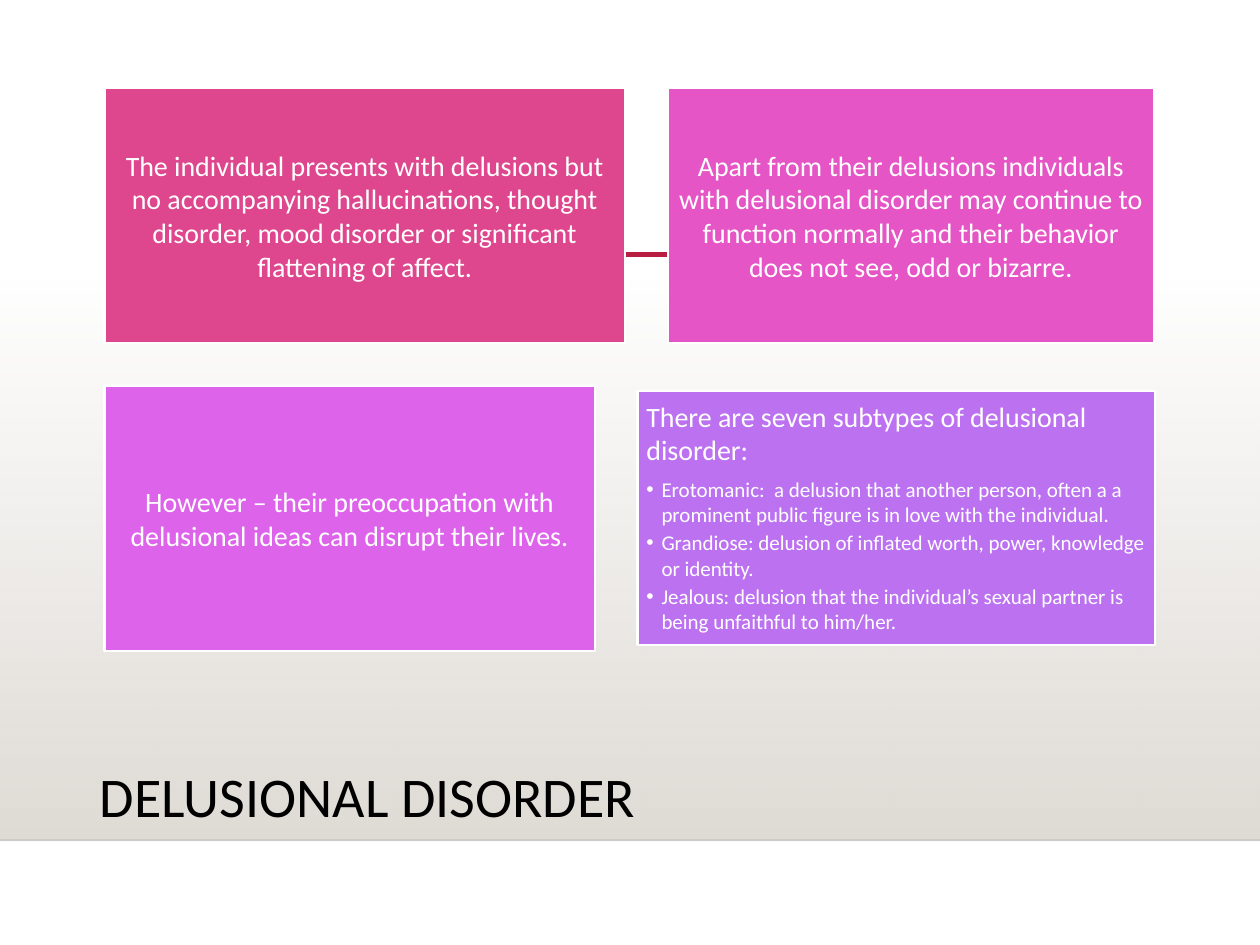
from dataclasses import dataclass

from lxml import etree
from pptx import Presentation
from pptx.dml.color import RGBColor
from pptx.enum import shapes, text
from pptx.oxml import ns
from pptx.util import Inches, Pt

COLORS = {
    "white": "FFFFFF", "black": "000000", "stone": "DFDBD5", "rule": "B71E42",
    "rose": "DE478E", "pink": "E555C6", "orchid": "DD63EB", "violet": "BC72F0",
}
FONT = "Calibri"


@dataclass
class Card:
    left: float
    top: float
    width: float
    height: float
    color: str
    statement: str = ""

    def box(self) -> list:
        return [Inches(v) for v in (self.left, self.top, self.width, self.height)]


CARDS = [
    Card(0.83, 0.7, 4.13, 2.02, "rose",
         "The individual presents with delusions but no accompanying hallucinations, "
         "thought disorder, mood disorder or significant flattening of affect."),
    Card(5.3, 0.7, 3.86, 2.02, "pink",
         "Apart from their delusions individuals with delusional disorder may continue "
         "to function normally and their behavior does not see, odd or bizarre."),
    Card(0.83, 3.06, 3.89, 2.11, "orchid",
         "However – their preoccupation with delusional ideas can disrupt their lives."),
]
SUBTYPE_CARD = Card(5.06, 3.1, 4.11, 2.02, "violet")
SUBTYPE_INTRO = "There are seven subtypes of delusional disorder:"
SUBTYPES = [
    "Erotomanic:  a delusion that another person, often a a prominent public figure "
    "is in love with the individual.",
    "Grandiose: delusion of inflated worth, power, knowledge or identity.",
    "Jealous: delusion that the individual’s sexual partner is being unfaithful to him/her.",
]


def rgb(name: str) -> RGBColor:
    return RGBColor.from_string(COLORS[name])


def set_all(target, values: dict) -> None:
    for name, value in values.items():
        setattr(target, name, value)


def add_rule(slide, left: float, right: float, y: float, color: str, width: float):
    rule = slide.shapes.add_connector(
        shapes.MSO_CONNECTOR.STRAIGHT, Inches(left), Inches(y), Inches(right), Inches(y))
    rule.line.color.rgb = rgb(color)
    rule.line.width = Pt(width)
    etree.SubElement(rule.element.spPr, ns.qn("a:effectLst"))
    return rule


def add_backdrop(slide) -> None:
    backdrop = slide.shapes.add_shape(
        shapes.MSO_SHAPE.RECTANGLE, 0, Inches(2.2), Inches(10), Inches(4.46))
    backdrop.shadow.inherit = False
    backdrop.line.fill.background()
    backdrop.fill.gradient()
    backdrop.fill.gradient_angle = 270  # counter-clockwise, so top to bottom
    for stop, alpha in zip(backdrop.fill.gradient_stops, (0, 100000)):
        stop.color.rgb = rgb("stone")
    for color, alpha in zip(backdrop.element.iter(ns.qn("a:srgbClr")), (0, 100000)):
        etree.SubElement(color, ns.qn("a:alpha"), val=str(alpha))


def style_card(shape, card: Card, anchor) -> None:
    shape.fill.solid()
    shape.fill.fore_color.rgb = rgb(card.color)
    shape.line.color.rgb = rgb("white")
    shape.line.width = Pt(1.25)
    margins = {f"margin_{side}": Inches(0.07) for side in ("left", "top", "right", "bottom")}
    set_all(shape.text_frame, {"word_wrap": True, "vertical_anchor": anchor,
                               "auto_size": text.MSO_AUTO_SIZE.NONE, **margins})


def write(paragraph, words: str, size: float, after: float, align) -> None:
    paragraph.text = words
    set_all(paragraph, {"alignment": align, "space_before": Pt(0), "space_after": Pt(after)})
    set_all(paragraph.font, {"name": FONT, "size": Pt(size)})
    paragraph.font.color.rgb = rgb("white")


def set_bullet(paragraph, indent: float, char: str = "") -> None:
    props = paragraph._p.get_or_add_pPr()
    props.set("marL", str(Inches(indent)))
    props.set("indent", str(-Inches(indent)))
    if char:
        etree.SubElement(props, ns.qn("a:buChar"), char=char)
    else:
        etree.SubElement(props, ns.qn("a:buNone"))


def add_card(slide, card: Card) -> None:
    shape = slide.shapes.add_shape(shapes.MSO_SHAPE.RECTANGLE, *card.box())
    shape.shadow.inherit = False
    style_card(shape, card, text.MSO_ANCHOR.MIDDLE)
    write(shape.text_frame.paragraphs[0], card.statement, 16, 5.6, text.PP_ALIGN.CENTER)


def place(shape, box: list) -> None:
    set_all(shape, dict(zip(("left", "top", "width", "height"), box)))


def fill_title(title) -> None:
    place(title, [Inches(v) for v in (0.69, 6.05, 6.63, 1.2)])
    title.text_frame.text = "DELUSIONAL DISORDER"
    set_all(title.text_frame, {"vertical_anchor": text.MSO_ANCHOR.TOP, "word_wrap": True,
                               "auto_size": text.MSO_AUTO_SIZE.NONE})
    heading = title.text_frame.paragraphs[0]
    set_all(heading, {"alignment": text.PP_ALIGN.LEFT, "line_spacing": 0.9})
    set_all(heading.font, {"name": FONT, "size": Pt(32)})
    heading.font.color.rgb = rgb("black")


def fill_subtypes(body) -> None:
    place(body, SUBTYPE_CARD.box())
    style_card(body, SUBTYPE_CARD, text.MSO_ANCHOR.TOP)
    intro = body.text_frame.paragraphs[0]
    set_bullet(intro, 0)
    write(intro, SUBTYPE_INTRO, 16, 5.6, text.PP_ALIGN.LEFT)
    for subtype in SUBTYPES:
        item = body.text_frame.add_paragraph()
        item.level = 1
        set_bullet(item, 0.12, "•")
        write(item, subtype, 12, 1.8, text.PP_ALIGN.LEFT)


def main() -> None:
    deck = Presentation()
    deck.slide_width, deck.slide_height = Inches(10), Inches(7.5)
    slide = deck.slides.add_slide(deck.slide_layouts[1])
    title, body = slide.placeholders

    # Backdrop and rules
    add_backdrop(slide)
    floor = add_rule(slide, 0, 10, 6.67, "black", 1)
    floor_color = next(floor.element.iter(ns.qn("a:srgbClr")))
    etree.SubElement(floor_color, ns.qn("a:alpha"), val="20000")
    add_rule(slide, 1.58, 8.77, 2.02, "rule", 2.5)

    # Title and statement cards, with the placeholders in front of the backdrop
    fill_title(title)
    slide.shapes._spTree.append(title.element)
    for card in CARDS:
        add_card(slide, card)

    # Subtype list
    fill_subtypes(body)
    slide.shapes._spTree.append(body.element)

    deck.save("out.pptx")


if __name__ == "__main__":
    main()
